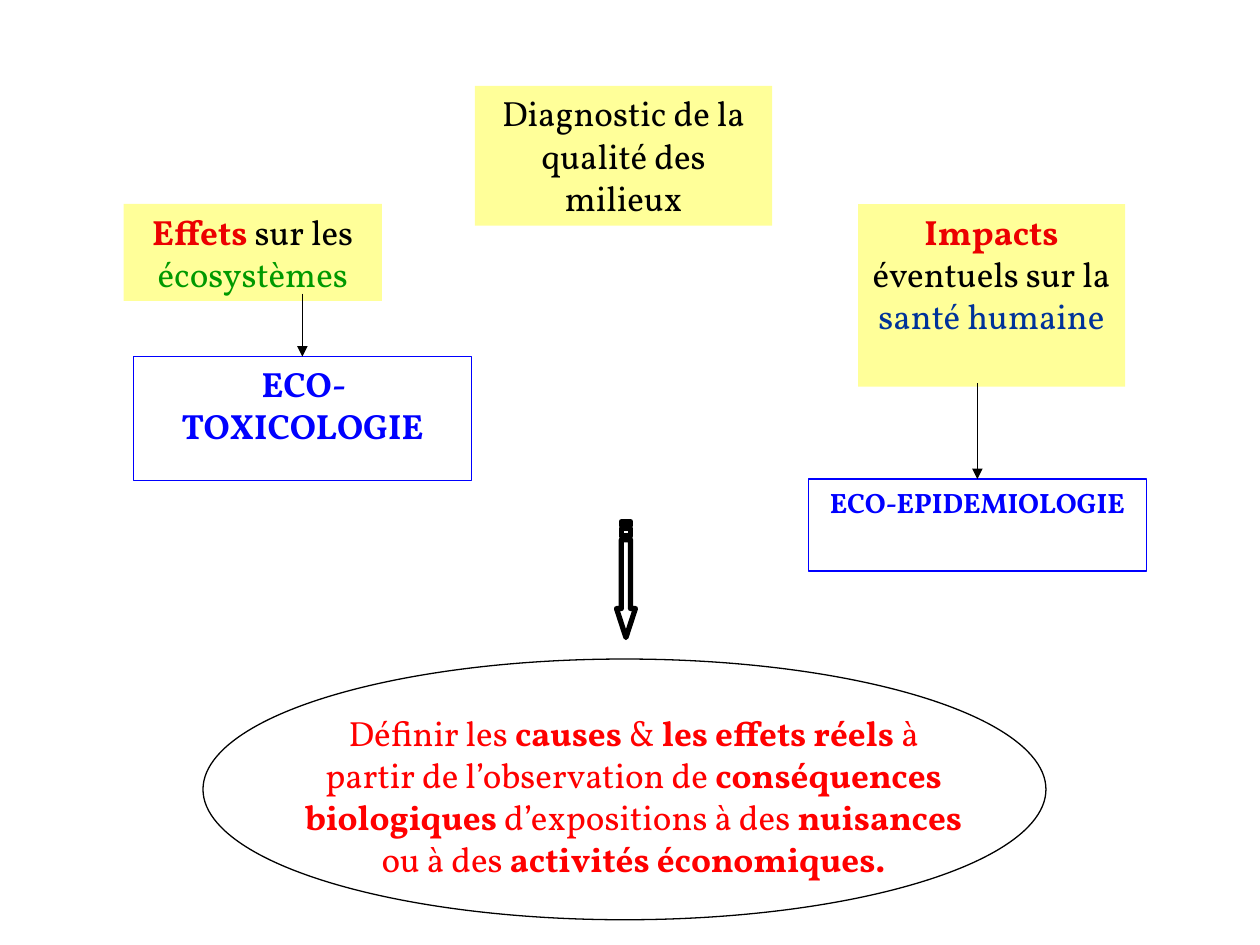
from dataclasses import dataclass
from typing import NamedTuple, Optional

from lxml import etree
from pptx import Presentation
from pptx.dml.color import RGBColor
from pptx.enum import shapes, text
from pptx.oxml.ns import qn
from pptx.util import Pt

FONT = "Vollkorn"
COLORS = {
    "black": "000000",
    "yellow": "FFFF99",
    "red": "FF0000",
    "dark_red": "EC0000",
    "green": "009900",
    "navy": "003399",
    "blue": "0000FF",
}


class Span(NamedTuple):
    text: str
    color: str = "black"
    bold: bool = False


@dataclass
class Box:
    left: float
    top: float
    width: float
    height: float
    spans: list[Span]
    fill: Optional[str] = None
    line: Optional[str] = None
    size: float = 20


@dataclass
class Discipline:
    """A framed field of study and the height where its arrow begins."""
    box: Box
    arrow_top: float


TOPICS = [
    Box(490.3, 116.6, 152.6, 104.4, [
        Span("Impacts", "dark_red", True),
        Span(" éventuels sur la "),
        Span("santé humaine", "navy"),
    ], fill="yellow"),
    Box(70.6, 116.6, 147.6, 55.4, [
        Span("Effets", "dark_red", True),
        Span(" sur les "),
        Span("écosystèmes", "green"),
    ], fill="yellow"),
    Box(271.4, 49, 169.9, 79.9,
        [Span("Diagnostic de la qualité des milieux")], fill="yellow"),
]
DISCIPLINES = [
    Discipline(Box(76.3, 203.8, 193, 70.6,
                   [Span("ECO-TOXICOLOGIE", "blue", True)], line="blue"), 167.8),
    Discipline(Box(462, 273.8, 193, 52.6,
                   [Span("ECO-EPIDEMIOLOGIE", "blue", True)],
                   line="blue", size=16), 218.9),
]
GOAL = [
    Span("Définir les ", "red"),
    Span("causes", "red", True),
    Span(" & ", "red"),
    Span("les effets réels", "red", True),
    Span(" à partir de l’observation de ", "red"),
    Span("conséquences biologiques", "red", True),
    Span(" d’expositions à des ", "red"),
    Span("nuisances", "red", True),
    Span(" ou à des ", "red"),
    Span("activités économiques.", "red", True),
]


def rgb(name: str) -> RGBColor:
    return RGBColor.from_string(COLORS[name])


def style(sp, fill: Optional[str], line: Optional[str], width: float = 0.75) -> None:
    sp.shadow.inherit = False
    if fill:
        sp.fill.solid()
        sp.fill.fore_color.rgb = rgb(fill)
    else:
        sp.fill.background()
    if line:
        sp.line.color.rgb = rgb(line)
        sp.line.width = Pt(width)
    else:
        sp.line.fill.background()


def write(sp, spans: list[Span], size: float) -> None:
    tf = sp.text_frame
    tf.word_wrap = True
    tf.vertical_anchor = text.MSO_ANCHOR.TOP
    p = tf.paragraphs[0]
    p.alignment = text.PP_ALIGN.CENTER
    p.font.name, p.font.size = FONT, Pt(size)
    for span in spans:
        r = p.add_run()
        r.text = span.text
        r.font.bold = span.bold
        r.font.color.rgb = rgb(span.color)


def add_box(slide, box: Box) -> None:
    sp = slide.shapes.add_shape(
        shapes.MSO_SHAPE.RECTANGLE,
        Pt(box.left), Pt(box.top), Pt(box.width), Pt(box.height))
    style(sp, box.fill, box.line)
    write(sp, box.spans, box.size)


def add_discipline(slide, item: Discipline) -> None:
    box = item.box
    add_box(slide, box)
    x = Pt(box.left + box.width / 2)
    line = slide.shapes.add_connector(
        shapes.MSO_CONNECTOR.STRAIGHT, x, Pt(item.arrow_top), x, Pt(box.top))
    line.line.color.rgb = rgb("black")
    line.line.width = Pt(0.75)
    etree.SubElement(line.line._get_or_add_ln(), qn("a:tailEnd"), type="triangle")
    etree.SubElement(line._element.spPr, qn("a:effectLst"))


def add_striped_arrow(slide, x: float, top: float, length: float) -> None:
    """Downward arrow centred on x, its tail cut into two stripes."""
    unit = length / 32
    shaft, head, bottom = 2.6, 5.4, top + length
    neck = bottom - length / 4

    def stripe(start: float, end: float) -> list[tuple[float, float]]:
        y0, y1 = top + start * unit, top + end * unit
        return [(x + shaft, y0), (x - shaft, y0), (x - shaft, y1), (x + shaft, y1)]

    body_top = top + 5 * unit
    body = [(x + head, neck), (x + shaft, neck), (x + shaft, body_top),
            (x - shaft, body_top), (x - shaft, neck), (x - head, neck), (x, bottom)]
    outlines = [[(Pt(px), Pt(py)) for px, py in points]
                for points in (body, stripe(2, 4), stripe(0, 1))]
    builder = slide.shapes.build_freeform(*outlines[0][0])
    builder.add_line_segments(outlines[0][1:])
    for points in outlines[1:]:
        builder.move_to(*points[0])
        builder.add_line_segments(points[1:])
    style(builder.convert_to_shape(), None, "black", 3)


def add_goal(slide) -> None:
    oval = slide.shapes.add_shape(
        shapes.MSO_SHAPE.OVAL, Pt(116), Pt(376.6), Pt(481.7), Pt(149))
    style(oval, None, "black")
    label = slide.shapes.add_textbox(Pt(167), Pt(403.2), Pt(390.2), Pt(150.5))
    write(label, GOAL, 20)


def main() -> None:
    prs = Presentation()
    prs.slide_width, prs.slide_height = Pt(720), Pt(540)
    slide = prs.slides.add_slide(prs.slide_layouts[6])
    add_goal(slide)
    add_striped_arrow(slide, 357.7, 298.1, 66.2)
    for topic in TOPICS:
        add_box(slide, topic)
    for item in DISCIPLINES:
        add_discipline(slide, item)
    prs.save("out.pptx")


if __name__ == "__main__":
    main()
